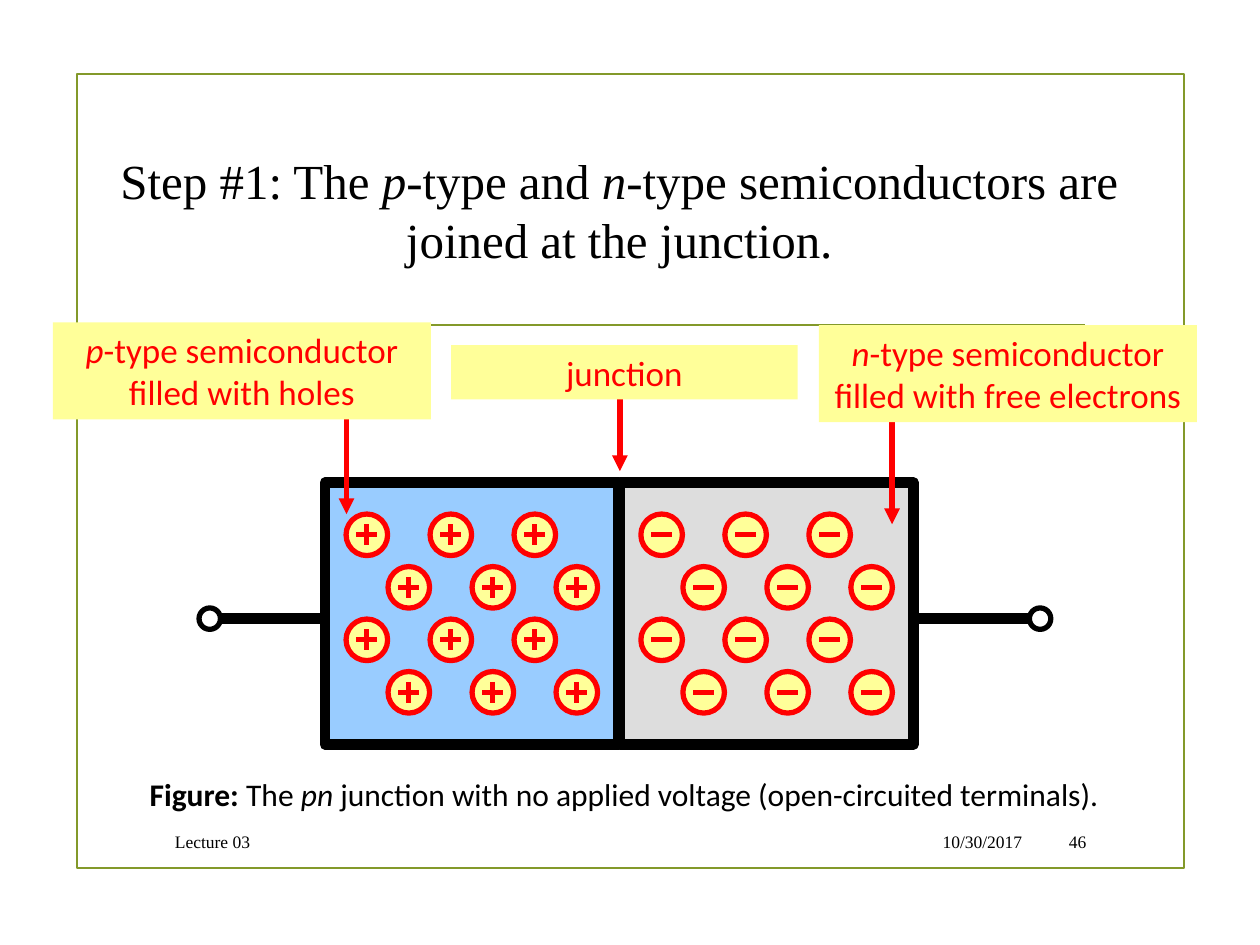
from dataclasses import dataclass

from lxml.etree import SubElement
from pptx import Presentation
from pptx.dml.color import RGBColor
from pptx.enum.shapes import MSO_CONNECTOR as Connector, MSO_SHAPE as Shape
from pptx.enum.text import MSO_ANCHOR as Anchor, PP_ALIGN as Align
from pptx.oxml.ns import qn
from pptx.util import Inches, Pt


@dataclass(frozen=True)
class Theme:
    """Colours, fonts, type sizes and line widths of the slide."""
    olive: str = "83992A"
    black: str = "000000"
    white: str = "FFFFFF"
    red: str = "FF0000"
    yellow: str = "FFFF99"
    blue: str = "99CCFF"
    grey: str = "DDDDDD"
    serif: str = "Times New Roman"
    sans: str = "Calibri"
    title: int = 28
    label: int = 20
    caption: int = 18
    footer: int = 10
    thin: float = 1.25
    medium: int = 3
    thick: int = 6


THEME = Theme()


def add_box(shapes, preset, box, fill=None, line=None, width=THEME.medium):
    """Add a preset shape in a box of inches, with optional fill and outline."""
    shape = shapes.add_shape(preset, *map(Inches, box))
    shape.shadow.inherit = False
    if fill:
        shape.fill.solid()
        shape.fill.fore_color.rgb = RGBColor.from_string(fill)
    else:
        shape.fill.background()
    if line:
        shape.line.color.rgb = RGBColor.from_string(line)
        shape.line.width = Pt(width)
    else:
        shape.line.fill.background()
    return shape


def add_line(shapes, start, end, color, width, arrow=False):
    """Add a straight line between two points in inches."""
    line = shapes.add_connector(Connector.STRAIGHT, *map(Inches, (*start, *end)))
    line.line.color.rgb = RGBColor.from_string(color)
    line.line.width = Pt(width)
    properties = line.line._get_or_add_ln()
    if arrow:
        SubElement(properties, qn("a:tailEnd"), type="triangle")
    SubElement(properties.getparent(), qn("a:effectLst"))
    return line


def add_text(shapes, box, runs, size, font=THEME.serif, color=THEME.black,
             align=Align.CENTER, anchor=Anchor.MIDDLE, fill=None):
    """Write (text, style) runs in a box; style "b" is bold and "i" italic."""
    if fill:
        holder = add_box(shapes, Shape.RECTANGLE, box, fill)
    else:
        holder = shapes.add_textbox(*map(Inches, box))
    frame = holder.text_frame
    frame.word_wrap = True
    frame.vertical_anchor = anchor
    paragraph = frame.paragraphs[0]
    paragraph.alignment = align
    for text, style in runs:
        run = paragraph.add_run()
        run.text = text
        run.font.name = font
        run.font.size = Pt(size)
        run.font.color.rgb = RGBColor.from_string(color)
        run.font.bold = style == "b"
        run.font.italic = style == "i"
    return holder


def draw_frame(shapes, box):
    """Draw the olive border and the rule below the title."""
    left, top, width, height = box
    add_box(shapes, Shape.RECTANGLE, box, line=THEME.olive, width=THEME.thin)
    rule_y = top + 1.99
    add_line(shapes, (left + 0.79, rule_y), (left + width - 0.79, rule_y),
             THEME.olive, THEME.thin)


def draw_charge(shapes, left, top, positive):
    """Draw a round carrier with a plus or minus sign as one group."""
    group = shapes.add_group_shape().shapes
    add_box(group, Shape.OVAL, (left, top, 0.33, 0.33), THEME.yellow, THEME.red)
    x, y, arm = left + 0.165, top + 0.165, 0.083
    add_line(group, (x - arm, y), (x + arm, y), THEME.red, THEME.medium)
    if positive:
        add_line(group, (x, y - arm), (x, y + arm), THEME.red, THEME.medium)


def draw_region(shapes, box, fill, positive):
    """Draw one semiconductor block filled with staggered carriers."""
    left, top, _, _ = box
    add_box(shapes, Shape.RECTANGLE, box, fill, THEME.black, THEME.thick)
    for row in range(4):
        for column in range(3):
            draw_charge(shapes, left + 1 / 6 + column * 2 / 3 + row % 2 / 3,
                        top + 0.25 + row * 5 / 12, positive)


def draw_junction(shapes, box):
    """Draw the lead, its two terminals and the p and n blocks."""
    left, top, width, height = box
    lead_y, terminal = top + 1.08, 0.17
    ends = left + terminal / 2, left + width - terminal / 2
    add_line(shapes, (ends[0], lead_y), (ends[1], lead_y), THEME.black, THEME.thick)
    for x in ends:
        add_box(shapes, Shape.OVAL,
                (x - terminal / 2, lead_y - terminal / 2, terminal, terminal),
                THEME.white, THEME.black)
    block = 2.33
    draw_region(shapes, (left + 1, top, block, height), THEME.blue, True)
    draw_region(shapes, (left + 3.34, top, block, height), THEME.grey, False)


def draw_callout(shapes, box, runs, tip):
    """Draw a yellow label whose arrow drops to the tip from behind it."""
    add_line(shapes, (tip[0], box[1] + box[3] / 2), tip, THEME.red, THEME.medium, True)
    add_text(shapes, box, runs, THEME.label, THEME.sans, THEME.red,
             anchor=Anchor.TOP, fill=THEME.yellow)


def draw_footer(shapes, box):
    """Write the lecture, date and page number along the bottom."""
    left, top, _, height = box
    for text, offset, width, align in (
        ("Lecture 03", 0, 5.58, Align.LEFT),
        ("10/30/2017", 5.66, 1.26, Align.RIGHT),
        ("46", 7, 0.43, Align.RIGHT),
    ):
        add_text(shapes, (left + offset, top, width, height), [(text, "")],
                 THEME.footer, align=align)


def main():
    """Build the slide and save it."""
    deck = Presentation()
    deck.slide_width, deck.slide_height = Inches(10), Inches(7.5)
    shapes = deck.slides.add_slide(deck.slide_layouts[6]).shapes

    draw_frame(shapes, (0.61, 0.59, 8.79, 6.3))
    add_text(shapes, (0.93, 6.1, 8.05, 0.4),
             [("Figure:", "b"), (" The ", ""), ("pn", "i"),
              (" junction with no applied voltage (open-circuited terminals).", "")],
             THEME.caption, THEME.sans, anchor=Anchor.TOP, fill=THEME.white)
    draw_junction(shapes, (1.58, 3.83, 6.76, 2.08))
    draw_callout(shapes, (6.5, 2.58, 3, 0.77),
                 [("n", "i"), ("-type semiconductor filled with free electrons", "")],
                 (7.08, 4.16))
    draw_callout(shapes, (0.42, 2.56, 3, 0.77),
                 [("p", "i"), ("-type semiconductor filled with holes", "")],
                 (2.75, 4.08))
    draw_callout(shapes, (3.58, 2.74, 2.75, 0.43), [("junction", "")], (4.92, 3.74))
    add_text(shapes, (0.54, 1.18, 8.75, 0.96),
             [("Step #1: The ", ""), ("p", "i"), ("-type and ", ""), ("n", "i"),
              ("-type semiconductors are joined at the junction.", "")], THEME.title)
    draw_footer(shapes, (1.29, 6.52, 7.43, 0.31))
    deck.save("out.pptx")


if __name__ == "__main__":
    main()
